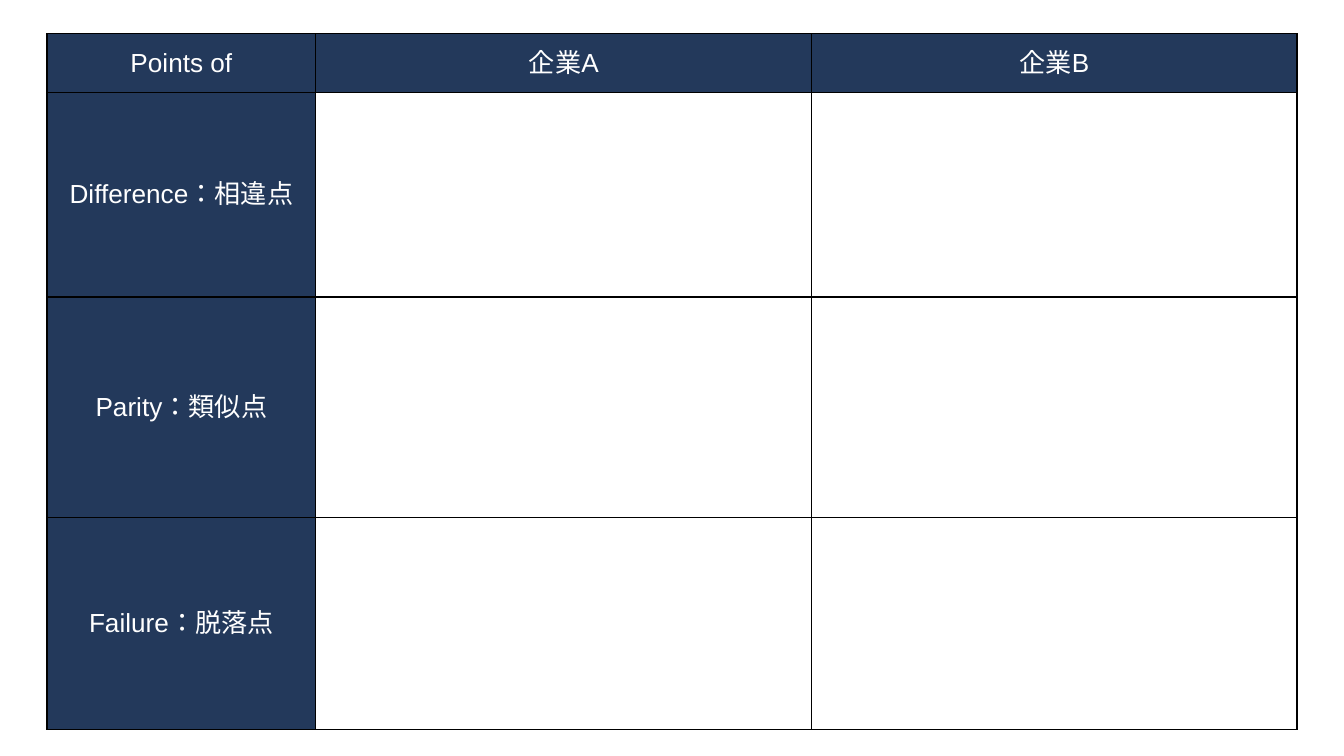
from lxml import etree
from pptx import Presentation
from pptx import util as u
from pptx.dml import color
from pptx.enum import lang, text
from pptx.oxml import ns

NAVY, WHITE, BLACK = "23395B", "FFFFFF", "000000"
SLIDE_WIDTH = 10


def rgb(value):
    return color.RGBColor.from_string(value)


class ComparisonSlide:
    """Holds the style and the current slide, and draws its table."""

    font = "Arial"
    size = 14
    border_width = 0.75
    margin = 0.1

    def __init__(self, presentation):
        self.slide = presentation.slides.add_slide(presentation.slide_layouts[6])

    def borders(self, cell):
        properties = cell._tc.get_or_add_tcPr()
        for index, side in enumerate(("lnL", "lnR", "lnT", "lnB")):
            line = etree.Element(ns.qn(f"a:{side}"), w=str(u.Pt(self.border_width)))
            fill = etree.SubElement(line, ns.qn("a:solidFill"))
            etree.SubElement(fill, ns.qn("a:srgbClr"), val=BLACK)
            properties.insert(index, line)

    def heading(self, cell, label):
        cell.fill.solid()
        cell.fill.fore_color.rgb = rgb(NAVY)
        cell.text_frame.text = label
        paragraph = cell.text_frame.paragraphs[0]
        paragraph.alignment = text.PP_ALIGN.CENTER
        run = paragraph.runs[0]
        run.font.name = self.font
        run.font.size = u.Pt(self.size)
        run.font.color.rgb = rgb(WHITE)
        run.font.language_id = lang.MSO_LANGUAGE_ID.JAPANESE
        etree.SubElement(run._r.rPr, ns.qn("a:ea"), typeface=self.font)

    def table(self, left, top, widths, heights, rows):
        shape = self.slide.shapes.add_table(
            len(heights), len(widths), u.Inches(left), u.Inches(top),
            u.Inches(sum(widths)), u.Inches(sum(heights)))
        table = shape.table
        table.first_row = table.horz_banding = False
        for column, width in zip(table.columns, widths):
            column.width = u.Inches(width)
        for row, height, labels in zip(table.rows, heights, rows):
            row.height = u.Inches(height)
            for cell, label in zip(row.cells, labels):
                cell.vertical_anchor = text.MSO_ANCHOR.MIDDLE
                cell.margin_left = cell.margin_right = u.Inches(self.margin)
                cell.margin_top = cell.margin_bottom = u.Inches(self.margin)
                if label:
                    self.heading(cell, label)
                else:
                    cell.fill.background()
                self.borders(cell)


def main():
    presentation = Presentation()
    presentation.slide_width = u.Inches(SLIDE_WIDTH)
    presentation.slide_height = u.Inches(SLIDE_WIDTH * 9 / 16)
    points = ["Difference：相違点", "Parity：類似点", "Failure：脱落点"]
    rows = [["Points of", "企業A", "企業B"]] + [[point, "", ""] for point in points]
    ComparisonSlide(presentation).table(
        0.35, 0.25, [2, 3.69, 3.61], [0.44, 1.52, 1.64, 1.58], rows)
    presentation.save("out.pptx")


if __name__ == "__main__":
    main()
